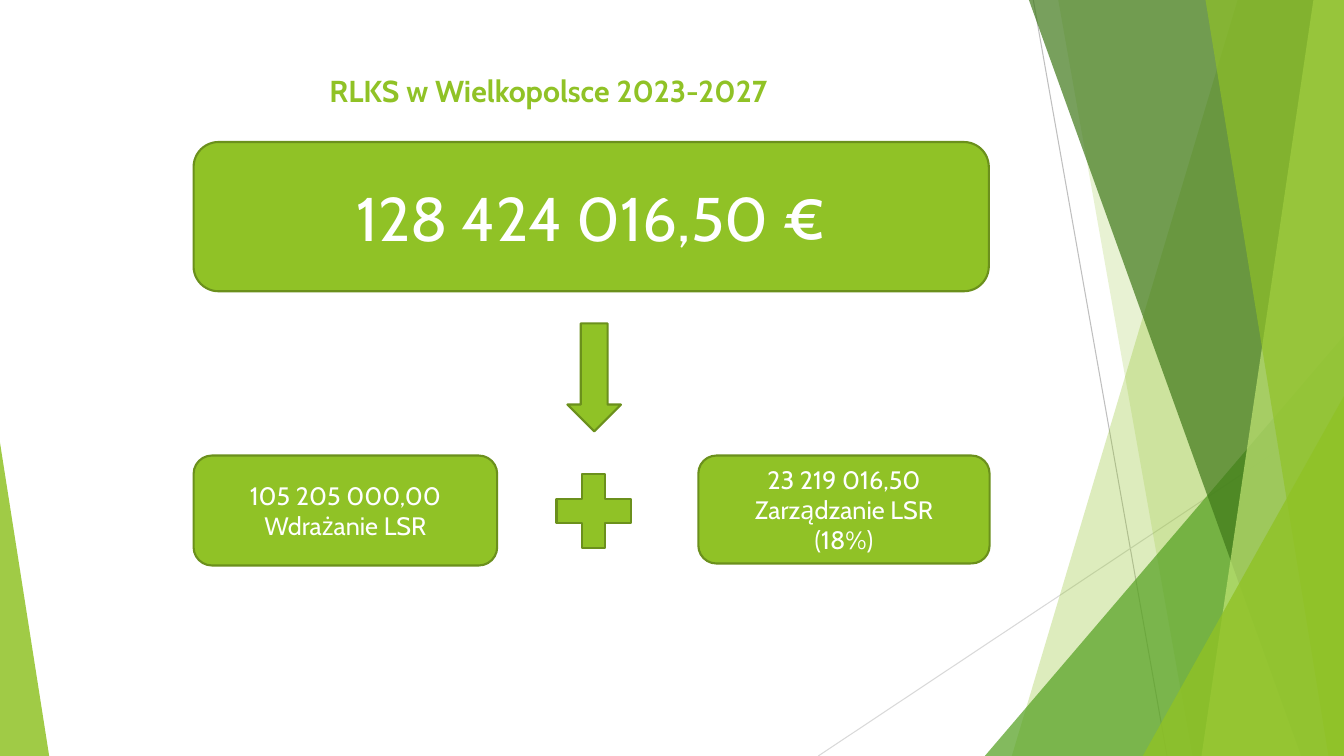
from dataclasses import dataclass

from lxml.etree import SubElement
from pptx import Presentation
from pptx.dml.color import RGBColor
from pptx.enum.shapes import MSO_CONNECTOR as Connector, MSO_SHAPE as Preset
from pptx.enum.text import MSO_ANCHOR as Anchor, MSO_AUTO_SIZE as AutoSize, PP_ALIGN as Align
from pptx.oxml.ns import qn
from pptx.shapes.autoshape import Shape
from pptx.shapes.shapetree import SlideShapes
from pptx.slide import Slide
from pptx.text.text import TextFrame
from pptx.util import Cm, Pt

LIME = RGBColor(0x90, 0xC2, 0x26)
PALE_LIME = RGBColor(0xC0, 0xE4, 0x74)
GREEN = RGBColor(0x54, 0xA0, 0x21)
DARK_GREEN = RGBColor(0x3F, 0x78, 0x19)
OUTLINE = RGBColor(0x6B, 0x90, 0x1C)
GREY = RGBColor(0xBF, 0xBF, 0xBF)
LIGHT_GREY = RGBColor(0xD9, 0xD9, 0xD9)
WHITE = RGBColor(0xFF, 0xFF, 0xFF)

WIDTH, HEIGHT = 33.87, 19.05
TITLE_ONLY = 5


@dataclass
class Ray:
    start: tuple[float, float]
    end: tuple[float, float]
    color: RGBColor


@dataclass
class Strip:
    top_x: float
    bottom_x: float
    color: RGBColor
    opacity: int


@dataclass
class Corner:
    left: float
    right: float
    top: float
    apex: float
    color: RGBColor
    opacity: int


@dataclass
class Block:
    preset: Preset
    left: float
    top: float
    width: float
    height: float
    text: str = ""
    size: float = 18


DECORATION = [
    Ray((26.04, 0), (29.41, HEIGHT), GREY),
    Ray((WIDTH, 10.24), (20.62, HEIGHT), LIGHT_GREY),
    Strip(31.19, 25.5, LIME, 30),
    Strip(26.67, 30.05, LIME, 20),
    Corner(24.82, WIDTH, 8.46, 1, GREEN, 72),
    Strip(25.93, 32.79, DARK_GREEN, 70),
    Strip(33.1, 30.28, PALE_LIME, 70),
    Strip(30.38, 33.48, LIME, 65),
    Corner(28.8, WIDTH, 9.98, 1, LIME, 80),
    Corner(0, 1.24, 11.15, 0, LIME, 85),
]

BLOCKS = [
    Block(Preset.ROUNDED_RECTANGLE, 4.88, 3.58, 20.04, 3.76, "128 424 016,50 €", 44),
    Block(Preset.ROUNDED_RECTANGLE, 4.88, 11.48, 7.65, 2.77,
          "105 205 000,00\nWdrażanie LSR"),
    Block(Preset.MATH_PLUS, 13.69, 11.61, 2.54, 2.54),
    Block(Preset.ROUNDED_RECTANGLE, 17.6, 11.48, 7.34, 2.72,
          "23 219 016,50\nZarządzanie LSR\n(18%)"),
    Block(Preset.DOWN_ARROW, 14.3, 8.15, 1.35, 2.72),
]


def apply_format(target: object, values: dict[str, object]) -> None:
    for name, value in values.items():
        setattr(target, name, value)


def write_text(frame: TextFrame, text: str, size: float, color: RGBColor, bold: bool) -> None:
    frame.text = text
    for paragraph in frame.paragraphs:
        paragraph.alignment = Align.CENTER
        for run in paragraph.runs:
            apply_format(run.font, {"name": "Cabin", "size": Pt(size), "bold": bold})
            run.font.color.rgb = color


def fill_shape(shape: Shape, color: RGBColor, opacity: int = 100) -> None:
    shape.shadow.inherit = False
    shape.fill.solid()
    shape.fill.fore_color.rgb = color
    if opacity < 100:
        solid_fill = shape.element.spPr.find(qn("a:solidFill"))
        SubElement(solid_fill[0], qn("a:alpha")).set("val", str(opacity * 1000))


def draw_ray(shapes: SlideShapes, ray: Ray) -> None:
    ends = [Cm(value) for value in (*ray.start, *ray.end)]
    connector = shapes.add_connector(Connector.STRAIGHT, *ends)
    connector.line.color.rgb = ray.color
    connector.line.width = Pt(0.75)
    SubElement(connector.element.spPr, qn("a:effectLst"))


def draw_strip(shapes: SlideShapes, strip: Strip) -> None:
    builder = shapes.build_freeform(Cm(strip.top_x), 0)
    corners = [(WIDTH, 0), (WIDTH, HEIGHT), (strip.bottom_x, HEIGHT)]
    builder.add_line_segments([(Cm(x), Cm(y)) for x, y in corners], close=True)
    shape = builder.convert_to_shape()
    fill_shape(shape, strip.color, strip.opacity)
    shape.line.fill.background()


def draw_corner(shapes: SlideShapes, corner: Corner) -> None:
    shape = shapes.add_shape(
        Preset.ISOSCELES_TRIANGLE, Cm(corner.left), Cm(corner.top),
        Cm(corner.right - corner.left), Cm(HEIGHT - corner.top))
    shape.adjustments[0] = corner.apex
    fill_shape(shape, corner.color, corner.opacity)
    shape.line.fill.background()


def draw_block(shapes: SlideShapes, block: Block) -> None:
    shape = shapes.add_shape(block.preset, Cm(block.left), Cm(block.top),
                             Cm(block.width), Cm(block.height))
    fill_shape(shape, LIME)
    shape.line.color.rgb = OUTLINE
    shape.line.width = Pt(1.5)
    if block.text:
        apply_format(shape.text_frame, {"word_wrap": True, "vertical_anchor": Anchor.MIDDLE})
        write_text(shape.text_frame, block.text, block.size, WHITE, False)


def place_title(slide: Slide) -> None:
    title = slide.shapes.title
    apply_format(title, {"left": Cm(1.88), "top": Cm(1.7),
                         "width": Cm(23.88), "height": Cm(1.9)})
    apply_format(title.text_frame, {"word_wrap": True, "auto_size": AutoSize.NONE,
                                    "vertical_anchor": Anchor.TOP})
    write_text(title.text_frame, "RLKS w Wielkopolsce 2023-2027", 21.6, LIME, True)


def main() -> None:
    presentation = Presentation()
    apply_format(presentation, {"slide_width": Cm(WIDTH), "slide_height": Cm(HEIGHT)})
    slide = presentation.slides.add_slide(presentation.slide_layouts[TITLE_ONLY])
    painters = {Ray: draw_ray, Strip: draw_strip, Corner: draw_corner, Block: draw_block}
    place_title(slide)
    for item in DECORATION + BLOCKS:
        painters[type(item)](slide.shapes, item)
    presentation.save("out.pptx")


if __name__ == "__main__":
    main()
